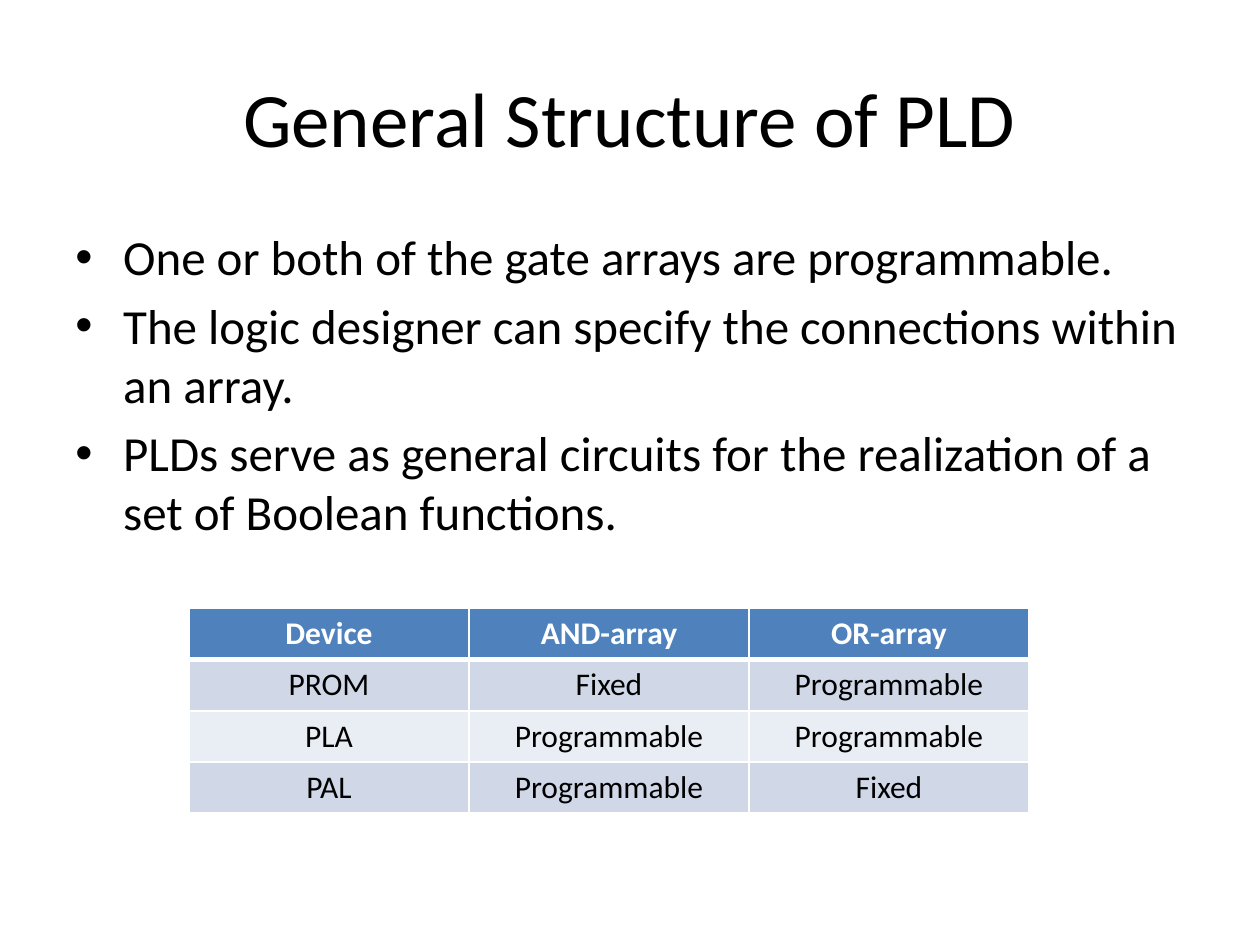
from lxml import etree
from pptx import Presentation, util as u
from pptx.dml.color import RGBColor
from pptx.enum import text
from pptx.oxml import ns

WIDTH, HEIGHT = 10, 7.5
MARGIN = 0.05 * WIDTH
FONT = "Calibri"
BLACK, WHITE, HEADER_FILL = "000000", "FFFFFF", "4F81BD"
BAND_FILLS = ("D0D8E8", "E9EDF4")

BULLETS = (
    "One or both of the gate arrays are programmable.",
    "The logic designer can specify the connections within an array.",
    "PLDs serve as general circuits for the realization of a set of Boolean functions.",
)
DEVICES = (
    ("Device", "AND-array", "OR-array"),
    ("PROM", "Fixed", "Programmable"),
    ("PLA", "Programmable", "Programmable"),
    ("PAL", "Programmable", "Fixed"),
)


def color(hex_code):
    return RGBColor.from_string(hex_code)


def set_attributes(target, values):
    for name, value in values.items():
        setattr(target, name, value)


def write(paragraph, words, size, hex_code=BLACK, bold=False, **layout):
    run = paragraph.add_run()
    run.text = words
    set_attributes(run.font, {"name": FONT, "size": u.Pt(size), "bold": bold})
    run.font.color.rgb = color(hex_code)
    set_attributes(paragraph, layout)


def add_text_frame(slide, top, height, anchor):
    box = (MARGIN, top, WIDTH - 2 * MARGIN, height)
    frame = slide.shapes.add_textbox(*map(u.Inches, box)).text_frame
    set_attributes(frame, {"word_wrap": True, "vertical_anchor": anchor,
                           "auto_size": text.MSO_AUTO_SIZE.NONE})
    return frame


def add_title(slide, words):
    frame = add_text_frame(slide, 0.04 * HEIGHT, HEIGHT / 6, text.MSO_ANCHOR.MIDDLE)
    write(frame.paragraphs[0], words, 44, alignment=text.PP_ALIGN.CENTER)


def add_bullets(slide, lines, size=28, indent=0.38):
    frame = add_text_frame(slide, 1.75, 0.66 * HEIGHT, text.MSO_ANCHOR.TOP)
    for index, line in enumerate(lines):
        paragraph = frame.add_paragraph() if index else frame.paragraphs[0]
        write(paragraph, line, size, space_before=u.Pt(0.2 * size))
        properties = paragraph._p.get_or_add_pPr()
        properties.set("marL", str(u.Inches(indent)))
        properties.set("indent", str(-u.Inches(indent)))
        etree.SubElement(properties, ns.qn("a:buFont"), typeface="Arial")
        etree.SubElement(properties, ns.qn("a:buChar"), char="•")


def set_borders(cell, widths):
    """Draw white borders; they must come before the cell's fill."""
    properties = cell._tc.get_or_add_tcPr()
    for index, (side, width) in enumerate(widths.items()):
        line = etree.Element(ns.qn("a:ln" + side), w=str(u.Pt(width)))
        fill = etree.SubElement(line, ns.qn("a:solidFill"))
        etree.SubElement(fill, ns.qn("a:srgbClr"), val=WHITE)
        properties.insert(index, line)


def add_device_table(slide, rows):
    row_count, column_count = len(rows), len(rows[0])
    box = (0.15 * WIDTH, 4.83, WIDTH * 2 / 3, 0.405 * row_count)
    table = slide.shapes.add_table(row_count, column_count, *map(u.Inches, box)).table
    for row, values in enumerate(rows):
        is_header = row == 0
        fill = HEADER_FILL if is_header else BAND_FILLS[(row - 1) % 2]
        for column, value in enumerate(values):
            cell = table.cell(row, column)
            cell.fill.solid()
            cell.fill.fore_color.rgb = color(fill)
            set_borders(cell, {"L": 1, "R": 1, "T": 3 if row == 1 else 1,
                               "B": 3 if is_header else 1})
            write(cell.text_frame.paragraphs[0], value, 18,
                  WHITE if is_header else BLACK, is_header,
                  alignment=text.PP_ALIGN.CENTER)


def main():
    presentation = Presentation()
    set_attributes(presentation, {"slide_width": u.Inches(WIDTH),
                                  "slide_height": u.Inches(HEIGHT)})
    slide = presentation.slides.add_slide(presentation.slide_layouts[6])

    # Heading and statements
    add_title(slide, "General Structure of PLD")
    add_bullets(slide, BULLETS)

    # Which array of each device can be programmed
    add_device_table(slide, DEVICES)

    presentation.save("out.pptx")


if __name__ == "__main__":
    main()
